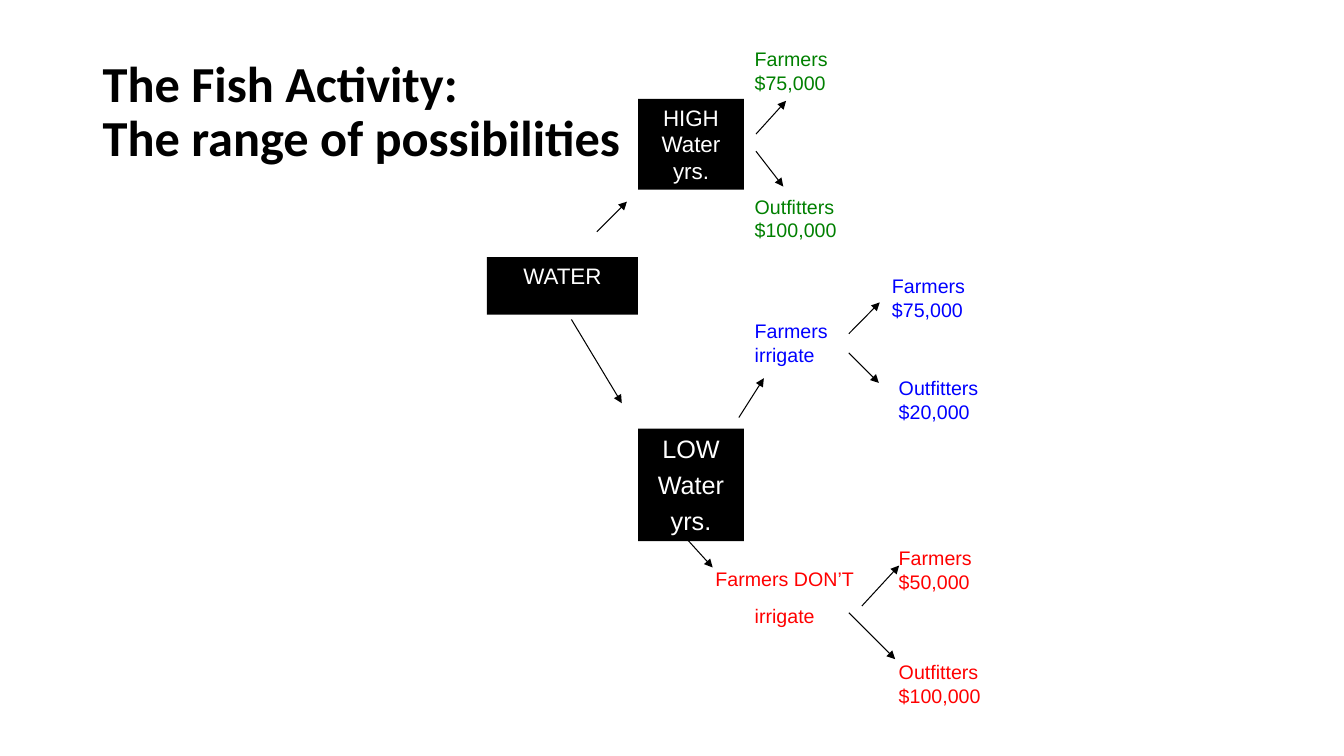
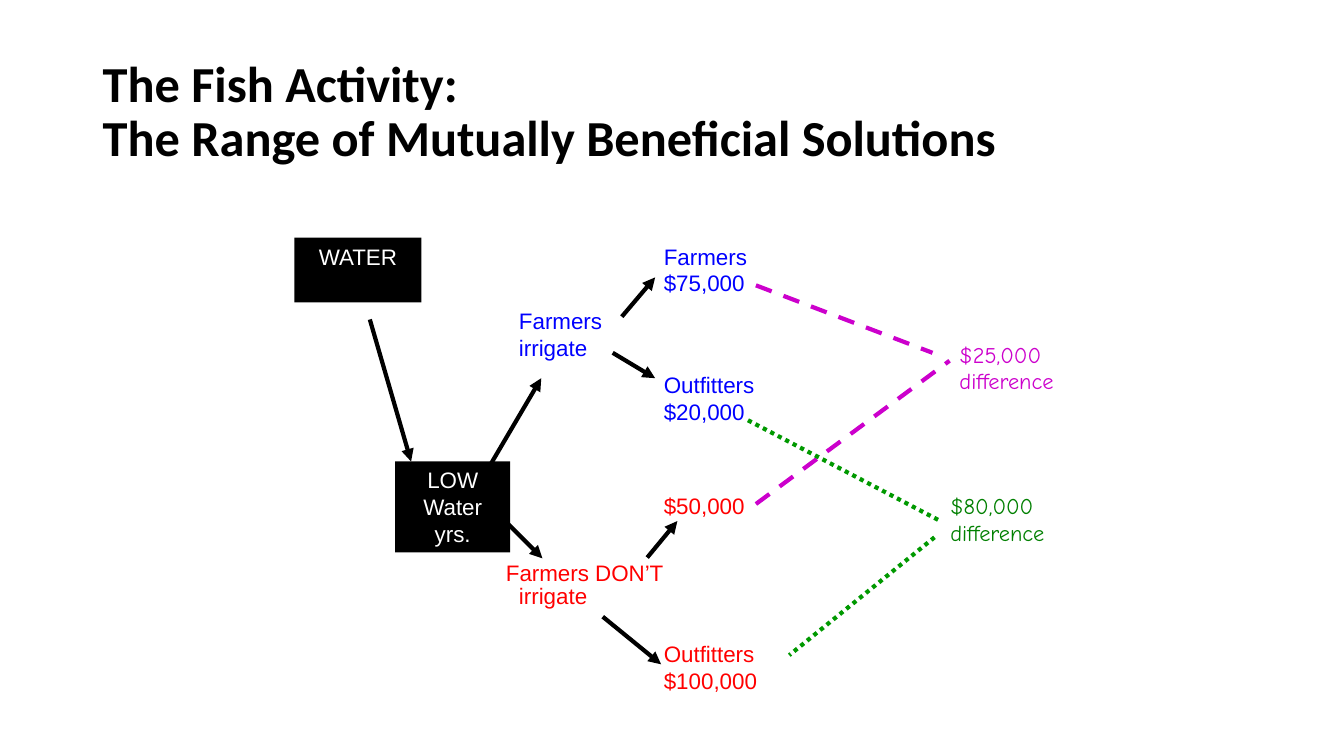
from dataclasses import dataclass

from lxml import etree
from pptx import Presentation
from pptx.dml.color import RGBColor
from pptx.enum.dml import MSO_LINE
from pptx.enum.shapes import MSO_CONNECTOR, MSO_SHAPE
from pptx.enum.text import MSO_ANCHOR, PP_ALIGN
from pptx.oxml.ns import qn
from pptx.util import Cm, Pt

RECTANGLE = MSO_SHAPE.RECTANGLE
STRAIGHT = MSO_CONNECTOR.STRAIGHT
TOP, MIDDLE = MSO_ANCHOR.TOP, MSO_ANCHOR.MIDDLE
LEFT, CENTER = PP_ALIGN.LEFT, PP_ALIGN.CENTER
DASH, DOT = MSO_LINE.DASH, MSO_LINE.ROUND_DOT


@dataclass(frozen=True)
class Theme:
    black: RGBColor = RGBColor(0x00, 0x00, 0x00)
    white: RGBColor = RGBColor(0xFF, 0xFF, 0xFF)
    green: RGBColor = RGBColor(0x00, 0x80, 0x00)
    bright_green: RGBColor = RGBColor(0x00, 0x99, 0x00)
    blue: RGBColor = RGBColor(0x00, 0x00, 0xFF)
    red: RGBColor = RGBColor(0xFF, 0x00, 0x00)
    magenta: RGBColor = RGBColor(0xCC, 0x00, 0xCC)
    title_font: str = "Calibri"
    body_font: str = "Arial"
    note_font: str = "Comic Neue"
    title_size: int = 36
    large_size: int = 18
    body_size: int = 16
    small_size: int = 14
    thin: float = 0.75
    thick: float = 3


THEME = Theme()


class Deck:
    """Holds the style and the slide being drawn."""

    def __init__(self, theme):
        self.theme = theme
        self.show = Presentation()
        self.show.slide_width, self.show.slide_height = Cm(33.87), Cm(19.05)
        self.slide = None

    def new_slide(self, *title_lines):
        self.slide = self.show.slides.add_slide(self.show.slide_layouts[6])
        heading = self.slide.shapes.add_textbox(Cm(2.34), Cm(1.02), Cm(29.21), Cm(3.68))
        heading.text_frame.word_wrap = True
        heading.text_frame.vertical_anchor = MIDDLE
        paragraph = heading.text_frame.paragraphs[0]
        paragraph.line_spacing = 0.9
        for index, line in enumerate(title_lines):
            if index:
                paragraph.add_line_break()
            paragraph.add_run().text = line
        self.style(paragraph, self.theme.black, name=self.theme.title_font,
                   size=Pt(self.theme.title_size), bold=True)

    @staticmethod
    def style(paragraph, color, **font_values):
        for run in paragraph.runs:
            for key, value in font_values.items():
                setattr(run.font, key, value)
            run.font.color.rgb = color

    def set_text(self, shape, lines, color, size, font=None, align=LEFT, gap=0, wrap=True):
        frame = shape.text_frame
        for key, value in {"word_wrap": wrap, "vertical_anchor": TOP}.items():
            setattr(frame, key, value)
        for index, line in enumerate(lines):
            paragraph = frame.add_paragraph() if index else frame.paragraphs[0]
            paragraph.text = line
            paragraph.alignment = align
            if index and gap:
                paragraph.space_before = Pt(gap)
            self.style(paragraph, color, name=font or self.theme.body_font, size=Pt(size))

    def label(self, lines, area, color, size, **options):
        box = self.slide.shapes.add_textbox(*map(Cm, area))
        self.set_text(box, lines, color, size, **options)

    def node(self, lines, area, size=THEME.body_size, gap=0):
        block = self.slide.shapes.add_shape(RECTANGLE, *map(Cm, area))
        block.shadow.inherit = False
        block.fill.solid()
        block.fill.fore_color.rgb = self.theme.black
        block.line.fill.background()
        self.set_text(block, lines, self.theme.white, size, align=CENTER, gap=gap)

    def line(self, ends, width, color=THEME.black, dash=None):
        """A plain line is an arrow; a dashed one has no head."""
        link = self.slide.shapes.add_connector(STRAIGHT, *map(Cm, ends))
        link.line.color.rgb = color
        link.line.width = Pt(width)
        properties = link._element.spPr
        if dash:
            link.line.dash_style = dash
        else:
            etree.SubElement(properties.find(qn("a:ln")), qn("a:tailEnd"), type="triangle")
        etree.SubElement(properties, qn("a:effectLst"))


def possibilities(deck):
    deck.new_slide("The Fish Activity:", "The range of possibilities")

    # Water years
    deck.node(["WATER"], (12.27, 6.48, 3.81, 1.45))
    deck.node(["HIGH Water yrs."], (16.08, 2.49, 2.67, 2.29))
    deck.node(["LOW", "Water", "yrs."], (16.08, 10.8, 2.67, 2.84),
              size=THEME.large_size, gap=4)

    # Choices and incomes
    choice, income = 18.77, 22.4
    choice_width, income_width, height = 3.66, 4.11, 1.45
    for lines, left, top, width, color in (
        (["Farmers", "$75,000"], choice, 1.07, choice_width, THEME.green),
        (["Outfitters", "$100,000"], choice, 4.78, choice_width, THEME.green),
        (["Farmers irrigate"], choice, 7.92, choice_width, THEME.blue),
        (["Farmers $75,000"], 22.23, 6.78, income_width, THEME.blue),
        (["Outfitters $20,000"], income, 9.35, income_width, THEME.blue),
        (["Farmers DON’T"], 17.78, 14.17, 4.55, THEME.red),
        (["irrigate"], choice, 15.09, choice_width, THEME.red),
        (["Farmers", "$50,000"], income, 13.64, income_width, THEME.red),
        (["Outfitters $100,000"], income, 16.51, income_width, THEME.red),
    ):
        deck.label(lines, (left, top, width, height), color, THEME.small_size)

    # Arrows
    for ends in (
        (15.04, 5.84, 15.8, 5.08), (14.4, 8.05, 15.67, 10.16),
        (19.05, 3.38, 19.81, 2.54), (19.05, 3.81, 19.74, 4.7),
        (18.62, 10.52, 19.25, 9.53), (17.27, 13.54, 17.96, 14.3),
        (21.39, 8.41, 22.17, 7.62), (21.39, 8.89, 22.15, 9.65),
        (21.72, 15.27, 22.66, 14.25), (21.39, 15.44, 22.56, 16.61),
    ):
        deck.line(ends, THEME.thin)


def solutions(deck):
    deck.new_slide("The Fish Activity:", "The Range of Mutually Beneficial Solutions")

    # Water years
    deck.node(["WATER"], (7.42, 5.99, 3.2, 1.63))
    deck.node(["LOW", "Water yrs."], (9.96, 11.63, 2.9, 2.29))

    # Choices and incomes
    choice, income = 12.83, 16.48
    choice_width, income_width, height = 3.66, 4.11, 1.6
    for text, left, top, width, color in (
        ("Farmers irrigate", choice, 7.62, choice_width, THEME.blue),
        ("Farmers $75,000", income, 5.99, income_width, THEME.blue),
        ("Outfitters $20,000", income, 9.22, income_width, THEME.blue),
        ("irrigate", choice, 14.55, choice_width, THEME.red),
        ("$50,000", income, 12.27, income_width, THEME.red),
        ("Outfitters $100,000", income, 16, income_width, THEME.red),
    ):
        deck.label([text], (left, top, width, height), color, THEME.body_size)
    deck.label(["Farmers DON’T"], (12.5, 13.97, 4.65, height), THEME.red,
               THEME.body_size, wrap=False)

    # Arrows
    for ends in (
        (9.32, 8.05, 10.36, 11.63), (12.27, 11.86, 13.64, 9.53),
        (12.5, 12.9, 13.67, 14.07), (15.67, 7.98, 16.51, 6.99),
        (15.44, 8.89, 16.51, 9.53), (16.31, 14.05, 17.07, 13.13),
        (15.19, 15.54, 16.66, 16.74),
    ):
        deck.line(ends, THEME.thick)

    # Differences between paired incomes
    for amount, area, text_color, line_color, dash, links in (
        ("$25,000", (23.93, 8.46, 4.45, 1.63), THEME.magenta, THEME.magenta, DASH,
         ((19.05, 12.7, 23.93, 9.09), (19.05, 7.19, 23.5, 8.89))),
        ("$80,000", (23.7, 12.27, 4.24, 1.63), THEME.green, THEME.bright_green, DOT,
         ((18.85, 10.59, 23.7, 13.13), (23.55, 13.54, 19.89, 16.51))),
    ):
        deck.label([amount, "difference"], area, text_color, THEME.body_size,
                   font=THEME.note_font)
        for ends in links:
            deck.line(ends, THEME.thick, line_color, dash)


def main():
    deck = Deck(THEME)
    possibilities(deck)
    solutions(deck)
    deck.show.save("out.pptx")


if __name__ == "__main__":
    main()
